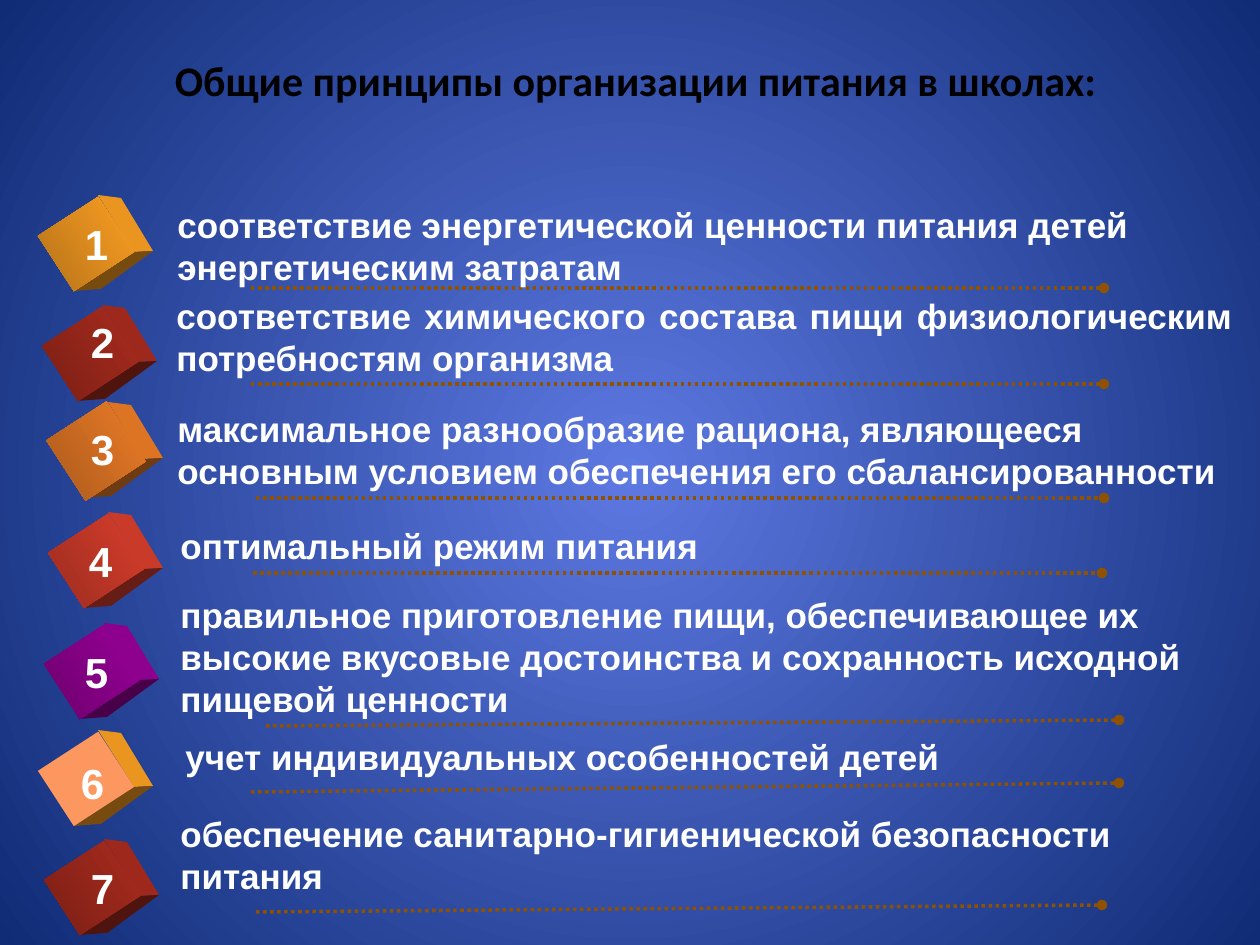
from lxml.etree import SubElement
from pptx import Presentation
from pptx.dml.color import RGBColor
from pptx.enum.dml import MSO_LINE
from pptx.enum.shapes import MSO_CONNECTOR, MSO_SHAPE
from pptx.enum.text import MSO_ANCHOR, PP_ALIGN
from pptx.oxml.ns import qn
from pptx.util import Pt

PX = 914400 / 126
TITLE = "Общие принципы организации питания в школах:"
GOLD, RED, ORANGE = ("FDA023", "B57219"), ("AA2B1E", "7A1F15"), ("ED7D27", "AA591C")
CORAL, PURPLE, PEACH = ("D83E2C", "9B2C1F"), ("990099", "6D006D"), ("FC9760", "FC9760")

# text, text box, cube front (x, y, width), number place, line ends, face colours, side colour
ROWS = [
    ("соответствие энергетической ценности питания детей энергетическим затратам",
     (165, 197, 1080, 97), (53, 208, 66), (72, 212), (251, 288, 1104, 288), GOLD, GOLD[0]),
    ("соответствие химического состава пищи физиологическим потребностям организма",
     (164, 288, 1081, 97), (57, 318, 66), (78, 310), (251, 384, 1104, 384), RED, RED[0]),
    ("максимальное разнообразие рациона, являющееся основным условием "
     "обеспечения его сбалансированности",
     (165, 401, 1080, 97), (60, 415, 72), (78, 417), (256, 498, 1104, 498), ORANGE, ORANGE[0]),
    ("оптимальный режим питания",
     (168, 518, 951, 55), (63, 525, 66), (76, 529), (253, 573, 1102, 573), CORAL, CORAL[0]),
    ("правильное приготовление пищи, обеспечивающее их высокие вкусовые "
     "достоинства и сохранность исходной пищевой ценности",
     (168, 587, 1077, 140), (59, 636, 66), (72, 640), (266, 726, 1119, 720), PURPLE, PURPLE[0]),
    ("учет индивидуальных особенностей детей",
     (173, 729, 810, 55), (53, 743, 66), (68, 751), (251, 792, 1119, 783), PEACH, GOLD[0]),
    ("обеспечение санитарно-гигиенической безопасности питания",
     (168, 806, 1092, 97), (59, 852, 66), (78, 856), (256, 912, 1102, 905), RED, RED[0]),
]
JUSTIFIED = 2
FACE_H = 72
# side faces: brightness and corners measured from the cube's centre
SIDES = [(0.93, [(12, -49), (35, -46), (67, 7), (48, 8)]),
         (0.47, [(48, 8), (67, 7), (15, 45), (-12, 47)])]
HEAD = {"name": "Calibri", "size": Pt(24), "bold": True}
BODY = {"name": "Arial", "size": Pt(20), "bold": True}
DIGIT = {**BODY, "size": Pt(24)}


def emu(*vals):
    return [round(v * PX) for v in vals]


def color(code, dim=1):
    base = RGBColor.from_string(code)
    return RGBColor(*(round(c * dim) for c in base))


def blend(fill, codes):
    fill.gradient()
    for stop, code, pos in zip(fill.gradient_stops, codes, (0, 1)):
        stop.color.rgb = color(code)
        stop.position = pos


def write(frame, text, style, code, align):
    frame.text = text
    para = frame.paragraphs[0]
    para.alignment = align
    font = para.runs[0].font
    for key, val in style.items():
        setattr(font, key, val)
    font.color.rgb = color(code)


def add_text(shapes, box, text, style, align, wrap):
    frame = shapes.add_textbox(*emu(*box)).text_frame
    frame.word_wrap = wrap
    write(frame, text, style, "FFFFFF", align)


def add_rule(shapes, ends):
    rule = shapes.add_connector(MSO_CONNECTOR.STRAIGHT, *emu(*ends))
    rule.line.color.rgb = color("8F5201")
    rule.line.width = Pt(2)
    rule.line.dash_style = MSO_LINE.ROUND_DOT
    SubElement(rule.line._ln, qn("a:tailEnd"), type="oval")
    SubElement(rule._element.spPr, qn("a:effectLst"))


def add_cube(shapes, x, y, w, codes, side):
    mid_x, mid_y = x + w / 2, y + FACE_H / 2
    for dim, corners in SIDES:
        pts = [emu(mid_x + dx, mid_y + dy) for dx, dy in corners]
        path = shapes.build_freeform(*pts[0])
        path.add_line_segments(pts[1:])
        part = path.convert_to_shape()
        part.fill.solid()
        part.fill.fore_color.rgb = color(side, dim)
        part.line.fill.background()
        part.shadow.inherit = False
    face = shapes.add_shape(MSO_SHAPE.RECTANGLE, *emu(x, y, w, FACE_H))
    face.rotation = 57
    blend(face.fill, codes)
    face.fill.gradient_angle = 270
    face.line.fill.background()
    face.shadow.inherit = False


def paint_back(slide):
    fill = slide.background.fill
    blend(fill, ("5D79E2", "102C76"))
    grad = slide._element.find(".//" + qn("a:gradFill"))
    grad.remove(grad.find(qn("a:lin")))
    path = SubElement(grad, qn("a:path"), path="circle")
    SubElement(path, qn("a:fillToRect"), dict.fromkeys("ltrb", "50000"))


def main():
    deck = Presentation()
    deck.slide_width, deck.slide_height = emu(1260, 945)
    slide = deck.slides.add_slide(deck.slide_layouts[5])
    paint_back(slide)
    shapes = slide.shapes
    title = shapes.title
    title.left, title.top, title.width, title.height = emu(35, 26, 1201, 108)
    title.text_frame.vertical_anchor = MSO_ANCHOR.MIDDLE
    write(title.text_frame, TITLE, HEAD, "000000", PP_ALIGN.CENTER)
    for num, (text, box, cube, spot, ends, codes, side) in enumerate(ROWS, 1):
        add_rule(shapes, ends)
        add_cube(shapes, *cube, codes, side)
        add_text(shapes, (*spot, 49, 63), str(num), DIGIT, PP_ALIGN.CENTER, False)
        align = PP_ALIGN.JUSTIFY if num == JUSTIFIED else PP_ALIGN.LEFT
        add_text(shapes, box, text, BODY, align, True)
    deck.save("out.pptx")


if __name__ == "__main__":
    main()
